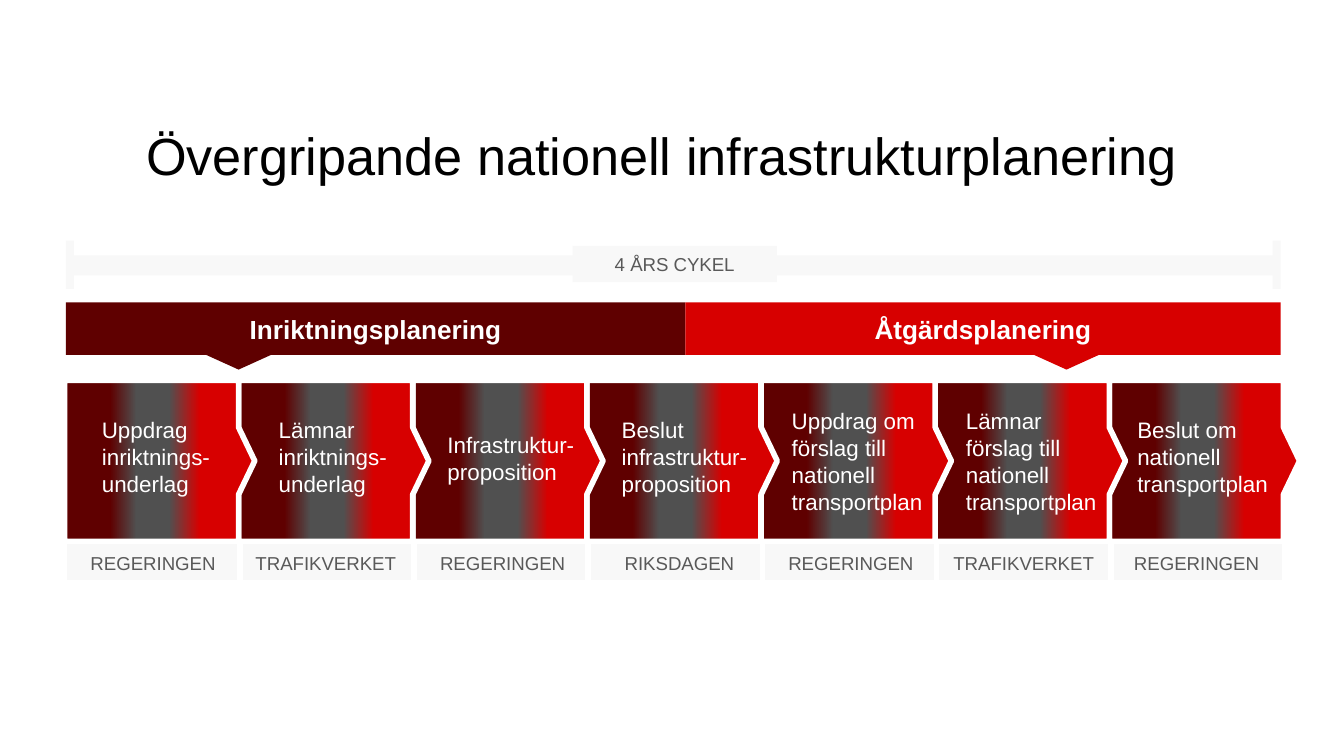
import pptx
import pptx.dml.color
import pptx.enum.shapes
import pptx.enum.text
import pptx.oxml
import pptx.oxml.ns
import pptx.util

Inches = pptx.util.Inches
Pt = pptx.util.Pt
SHAPE = pptx.enum.shapes.MSO_SHAPE
CENTER = pptx.enum.text.PP_ALIGN.CENTER
LEFT = pptx.enum.text.PP_ALIGN.LEFT

DARK_RED, RED, GRAY = "5F0000", "D70000", "505050"
WHITE, PALE, LABEL_GRAY = "FFFFFF", "F8F8F8", "595959"
GRADIENT = [(24, DARK_RED), (38, GRAY), (55, GRAY), (71, RED)]

# Step text, its offset from the step's corner, responsible body, label shift
STEPS = [
    ("Uppdrag\ninriktnings-underlag", 0.18, 0.22, "REGERINGEN", 0.01),
    ("Lämnar inriktnings-underlag", 0.2, 0.22, "TRAFIKVERKET", 0),
    ("Infrastruktur-proposition", 0.16, 0.33, "REGERINGEN", 0.02),
    ("Beslut infrastruktur-proposition", 0.16, 0.22, "RIKSDAGEN", 0.04),
    ("Uppdrag om förslag till nationell transportplan", 0.13, 0.15, "REGERINGEN", 0.02),
    ("Lämnar \vförslag till nationell transportplan", 0.13, 0.15, "TRAFIKVERKET", 0.01),
    ("Beslut om nationell transportplan", 0.11, 0.22, "REGERINGEN", 0),
]


def rgb(value):
    return pptx.dml.color.RGBColor.from_string(value)


def set_text(shape, text, size, color, alignment=CENTER, bold=False):
    frame = shape.text_frame
    frame.word_wrap = True
    frame.text = text
    for paragraph in frame.paragraphs:
        paragraph.alignment = alignment
        for run in paragraph.runs:
            run.font.name = "Arial"
            run.font.size = Pt(size)
            run.font.bold = bold
            run.font.color.rgb = rgb(color)


def add_text(slide, left, top, width, height, text, size, color, alignment=CENTER):
    box = slide.shapes.add_textbox(Inches(left), Inches(top), Inches(width), Inches(height))
    set_text(box, text, size, color, alignment)


def set_outline(shape, outlined):
    shape.shadow.inherit = False
    if outlined:
        shape.line.color.rgb = rgb(WHITE)
        shape.line.width = Pt(3)
    else:
        shape.line.fill.background()


def add_block(slide, left, top, width, height, color, kind=SHAPE.RECTANGLE, outlined=False):
    shape = slide.shapes.add_shape(
        kind, Inches(left), Inches(top), Inches(width), Inches(height))
    shape.fill.solid()
    shape.fill.fore_color.rgb = rgb(color)
    set_outline(shape, outlined)
    return shape


def set_gradient(shape, stops):
    shape.fill.gradient()
    shape.fill.gradient_angle = 0
    stop_list = shape._element.spPr.find(".//" + pptx.oxml.ns.qn("a:gsLst"))
    for stop in list(stop_list):
        stop_list.remove(stop)
    for position, color in stops:
        stop_list.append(pptx.oxml.parse_xml(
            f'<a:gs {pptx.oxml.ns.nsdecls("a")} pos="{position * 1000}">'
            f'<a:srgbClr val="{color}"/></a:gs>'))


def add_cycle_bar(slide, left, top, width, height, text):
    end_width, label_width = 0.06, 1.52
    label_left = left + 3.77
    add_block(slide, label_left, top + 0.04, label_width, 0.27, PALE)
    add_block(slide, left + 0.02, top + 0.11, width - 0.05, 0.15, PALE)
    add_text(slide, label_left, top + 0.04, label_width, 0.24, text, 10, LABEL_GRAY)
    for end_left in (left + width - end_width, left):
        add_block(slide, end_left, top, end_width, height, PALE)


def add_phase(slide, left, top, width, height, text, color, pointer_offset):
    """Coloured band with a pointer hanging below it."""
    band = add_block(slide, left, top, width, height, color)
    band.text_frame.vertical_anchor = pptx.enum.text.MSO_ANCHOR.MIDDLE
    set_text(band, text, 14, WHITE, bold=True)
    pointer = add_block(slide, left + pointer_offset, top + height - 0.01, 0.53, 0.12,
                        color, SHAPE.ISOSCELES_TRIANGLE)
    pointer.rotation = 180


def add_arrow(slide, left, top, width, height):
    """Box whose right side has a point reaching into the next step."""
    right, middle, bottom = left + width, top + height / 2, top + height
    outline = [(right, top), (right, middle - 0.25), (right + 0.12, middle),
               (right, middle + 0.25), (right, bottom), (left, bottom)]
    builder = slide.shapes.build_freeform(Inches(left), Inches(top))
    builder.add_line_segments([(Inches(x), Inches(y)) for x, y in outline], close=True)
    arrow = builder.convert_to_shape()
    set_gradient(arrow, GRADIENT)
    set_outline(arrow, True)


def add_steps(slide, left, top, width, height):
    """Row of arrows with responsible bodies below; drawn right to left so points overlap."""
    pitch = width / len(STEPS)
    label_height = 0.31
    arrow_height = height - label_height
    label_top = top + arrow_height
    cells = [(left + index * pitch, step) for index, step in enumerate(STEPS)][::-1]
    for cell_left, _ in cells:
        add_arrow(slide, cell_left, top, pitch, arrow_height)
    for cell_left, (text, text_x, text_y, body, shift) in cells:
        add_block(slide, cell_left, label_top, pitch + 0.01, label_height, PALE, outlined=True)
        add_text(slide, cell_left + text_x, top + text_y, 1.26, 0.64, text, 12, WHITE, LEFT)
        add_text(slide, cell_left + shift, label_top + 0.03, pitch, 0.24, body, 10, LABEL_GRAY)


def main():
    presentation = pptx.Presentation()
    presentation.slide_width = Inches(10)
    presentation.slide_height = Inches(10 * 9 / 16)
    slide = presentation.slides.add_slide(presentation.slide_layouts[6])

    add_text(slide, 0, 0.87, 9.84, 0.57,
             "Övergripande nationell infrastrukturplanering", 28, "000000")
    add_phase(slide, 0.49, 2.25, 4.61, 0.39, "Inriktningsplanering", DARK_RED, 1.02)
    add_phase(slide, 5.1, 2.25, 4.43, 0.39, "Åtgärdsplanering", RED, 2.57)
    add_steps(slide, 0.48, 2.83, 9.07, 1.51)
    add_cycle_bar(slide, 0.49, 1.79, 9.04, 0.36, "4 ÅRS CYKEL")

    presentation.save("out.pptx")


if __name__ == "__main__":
    main()
